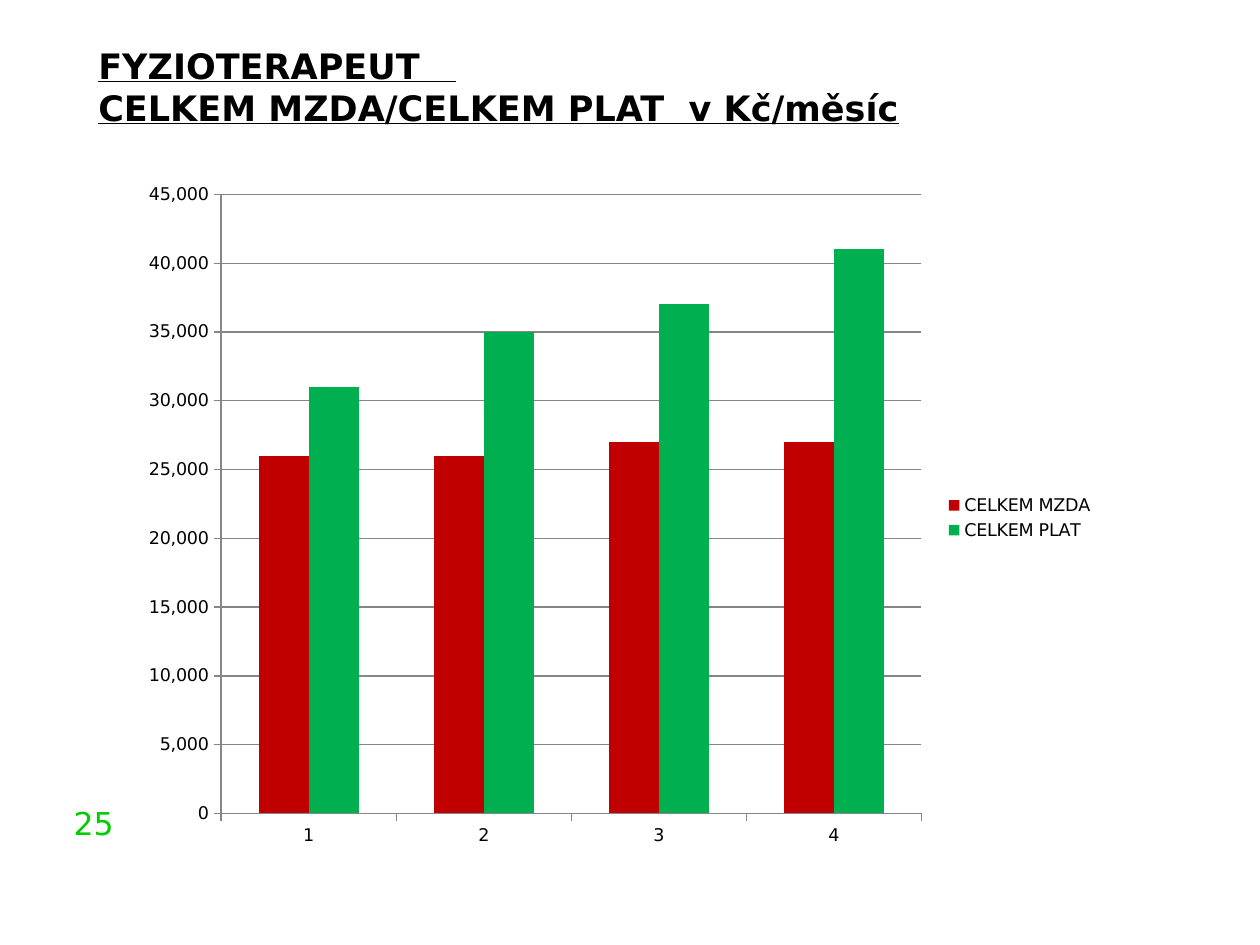
from dataclasses import dataclass

from lxml.etree import SubElement
from pptx import Presentation
from pptx.chart.data import CategoryChartData
from pptx.dml.color import RGBColor
from pptx.enum.chart import XL_CHART_TYPE as ChartType
from pptx.enum.chart import XL_LEGEND_POSITION as LegendPosition
from pptx.enum.chart import XL_TICK_MARK as TickMark
from pptx.enum.text import MSO_ANCHOR as Anchor
from pptx.enum.text import PP_ALIGN as Align
from pptx.oxml.ns import qn
from pptx.util import Inches, Pt


@dataclass(frozen=True)
class Theme:
    """Colours, font and type sizes of the slide."""
    font: str = "DejaVu Sans"
    text: RGBColor = RGBColor(0x00, 0x00, 0x00)
    number: RGBColor = RGBColor(0x00, 0xCC, 0x00)
    axis: RGBColor = RGBColor(0x86, 0x86, 0x86)
    title_size: int = 20
    number_size: int = 18
    chart_size: int = 10


@dataclass(frozen=True)
class PaySeries:
    """One column series with its fill colour."""
    name: str
    values: tuple[int, ...]
    color: RGBColor


THEME = Theme()
TITLE_LINES = ("FYZIOTERAPEUT   ", "CELKEM MZDA/CELKEM PLAT  v Kč/měsíc")
CATEGORIES = ("1", "2", "3", "4")
PAY_SERIES = (
    PaySeries("CELKEM MZDA", (26000, 26000, 27000, 27000), RGBColor(0xC0, 0x00, 0x00)),
    PaySeries("CELKEM PLAT", (31000, 35000, 37000, 41000), RGBColor(0x00, 0xB0, 0x50)),
)
PLOT_LAYOUT = {"x": 0.09, "y": 0.03, "w": 0.72, "h": 0.9}


def style_font(font, size: int, color: RGBColor) -> None:
    """Apply the theme font with a size and colour."""
    font.name = THEME.font
    font.size = Pt(size)
    font.color.rgb = color


def add_title(slide) -> None:
    """Place the underlined two-line title."""
    title = slide.shapes.title
    title.left, title.top = Inches(0.68), Inches(0.36)
    title.width, title.height = Inches(8.41), Inches(1.16)
    frame = title.text_frame
    frame.word_wrap = True
    frame.vertical_anchor = Anchor.MIDDLE
    frame.margin_bottom = Inches(0.55)
    paragraph = frame.paragraphs[0]
    paragraph.alignment = Align.LEFT
    for index, line in enumerate(TITLE_LINES):
        if index:
            paragraph.add_line_break()
        run = paragraph.add_run()
        run.text = line
        style_font(run.font, THEME.title_size, THEME.text)
        run.font.bold = True
        run.font.underline = True


def add_page_number(slide, number: str) -> None:
    """Place the page number at the lower left."""
    box = slide.shapes.add_textbox(Inches(0), Inches(6.33), Inches(1), Inches(0.58))
    box.text_frame.word_wrap = True
    paragraph = box.text_frame.paragraphs[0]
    paragraph.alignment = Align.RIGHT
    run = paragraph.add_run()
    run.text = number
    style_font(run.font, THEME.number_size, THEME.number)


def set_plot_layout(chart) -> None:
    """Fix the inner plot area as fractions of the chart."""
    plot_area = chart.plots[0]._element.getparent()
    layout = plot_area.find(qn("c:layout"))
    if layout is None:
        layout = SubElement(plot_area, qn("c:layout"))
        plot_area.insert(0, layout)
    manual = SubElement(layout, qn("c:manualLayout"))
    settings = {"layoutTarget": "inner", "xMode": "edge", "yMode": "edge", **PLOT_LAYOUT}
    for name, value in settings.items():
        SubElement(manual, qn(f"c:{name}")).set("val", str(value))


def style_axes(chart) -> None:
    """Format both axes and the horizontal gridlines."""
    value_axis = chart.value_axis
    value_axis.minimum_scale = 0
    value_axis.maximum_scale = 45000
    value_axis.major_unit = 5000
    value_axis.has_major_gridlines = True
    value_axis.tick_labels.number_format = "#,##0"
    value_axis.tick_labels.number_format_is_linked = False
    for axis in (chart.category_axis, value_axis):
        axis.major_tick_mark = TickMark.OUTSIDE
        axis.minor_tick_mark = TickMark.NONE
    for part in (chart.category_axis, value_axis, value_axis.major_gridlines):
        part.format.line.color.rgb = THEME.axis
        part.format.line.width = Pt(0.75)


def add_pay_chart(slide) -> None:
    """Draw the clustered columns of wages and salaries."""
    data = CategoryChartData(number_format="#,##0")
    data.categories = CATEGORIES
    for pay in PAY_SERIES:
        data.add_series(pay.name, pay.values)
    chart = slide.shapes.add_chart(
        ChartType.COLUMN_CLUSTERED,
        Inches(1.06), Inches(1.38), Inches(7.72), Inches(5.46), data,
    ).chart
    style_font(chart.font, THEME.chart_size, THEME.text)
    chart.has_title = False
    chart.has_legend = True
    chart.legend.position = LegendPosition.RIGHT
    chart.legend.include_in_layout = False
    plot = chart.plots[0]
    plot.gap_width = 150
    plot.overlap = 0
    plot.vary_by_categories = False
    for series, pay in zip(plot.series, PAY_SERIES):
        series.format.fill.solid()
        series.format.fill.fore_color.rgb = pay.color
    style_axes(chart)
    set_plot_layout(chart)


def main() -> None:
    """Build and save the slide."""
    presentation = Presentation()
    presentation.slide_width = Inches(10)
    presentation.slide_height = Inches(7.5)
    slide = presentation.slides.add_slide(presentation.slide_layouts[5])
    add_page_number(slide, "25")
    add_title(slide)
    add_pay_chart(slide)
    presentation.save("out.pptx")


if __name__ == "__main__":
    main()
